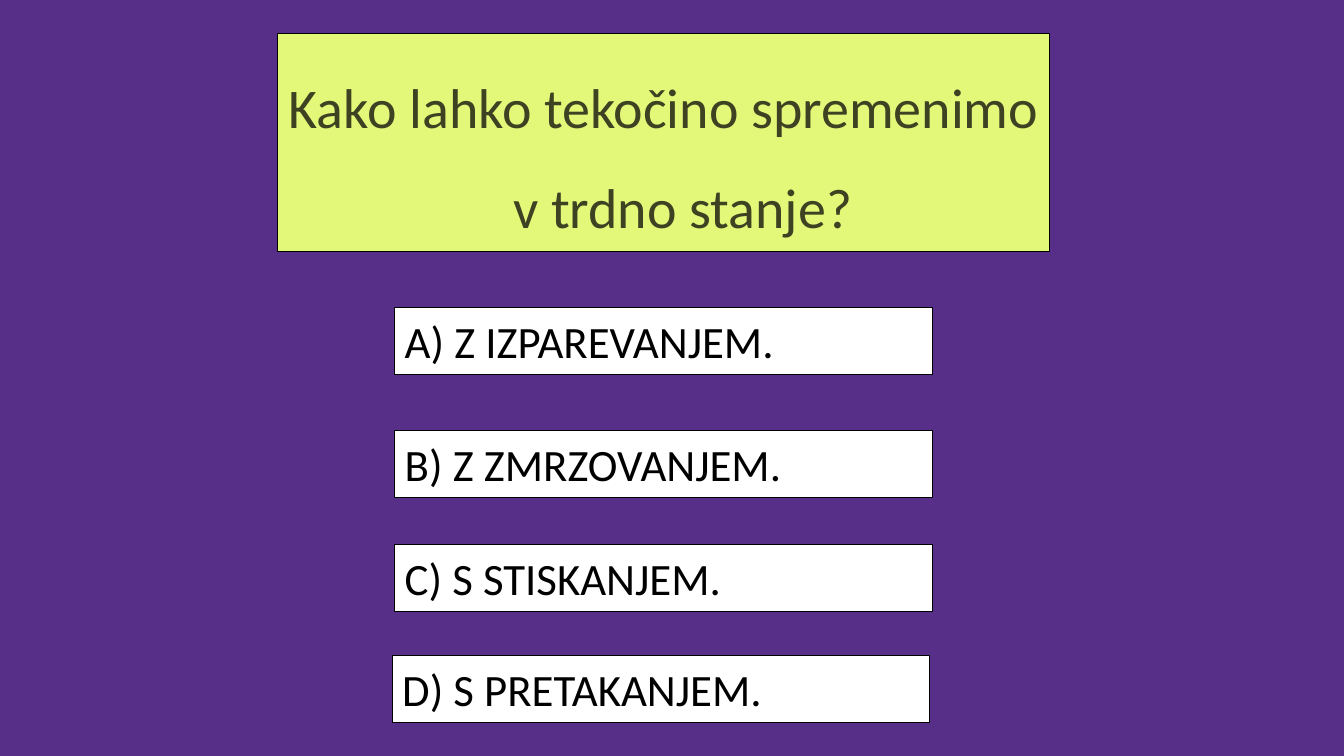
from pptx import Presentation
from pptx.dml.color import RGBColor
from pptx.enum.shapes import MSO_SHAPE
from pptx.enum.text import MSO_ANCHOR, PP_ALIGN
from pptx.util import Inches, Pt

COLORS = {
    "background": "572E88",
    "question": "E3F878",
    "question_text": "3E4223",
    "answer": "FFFFFF",
    "answer_text": "000000",
    "border": "000000",
}
COLUMNS, ROWS = 160, 90
ANSWERS = [
    ("A) Z IZPAREVANJEM.", 47, 36.6),
    ("B) Z ZMRZOVANJEM.", 47, 51.2),
    ("C) S STISKANJEM.", 47, 64.8),
    ("D) S PRETAKANJEM.", 46.7, 78),
]


def color(name):
    return RGBColor.from_string(COLORS[name])


def write(box, text, *, size, fill, font="Calibri", align=PP_ALIGN.LEFT,
          anchor=MSO_ANCHOR.MIDDLE, wrap=False, spacing=1.0, hanging=0):
    frame = box.text_frame
    frame.word_wrap = wrap
    frame.vertical_anchor = anchor
    para = frame.paragraphs[0]
    para.alignment = align
    para.line_spacing = spacing
    if hanging:
        properties = para._p.get_or_add_pPr()
        properties.set("marL", str(Inches(hanging)))
        properties.set("indent", str(-Inches(hanging)))
    span = para.add_run()
    span.text = text
    span.font.name = font
    span.font.size = Pt(size)
    span.font.color.rgb = color(fill)


class QuizPage:
    """Draws a quiz question and its answers on a grid over one slide."""

    def __init__(self, deck):
        self.page = deck.slides.add_slide(deck.slide_layouts[6])
        self.column = deck.slide_width / COLUMNS
        self.row = deck.slide_height / ROWS
        background = self.page.background.fill
        background.solid()
        background.fore_color.rgb = color("background")

    def panel(self, kind, left, top, width, height, fill):
        box = self.page.shapes.add_shape(
            kind, round(left * self.column), round(top * self.row),
            round(width * self.column), round(height * self.row))
        box.shadow.inherit = False
        box.fill.solid()
        box.fill.fore_color.rgb = color(fill)
        box.line.color.rgb = color("border")
        box.line.width = Pt(0.75)
        return box

    def question(self, text):
        box = self.panel(MSO_SHAPE.RECTANGLE, 33, 4, 92, 26, "question")
        write(box, text, size=40, fill="question_text", align=PP_ALIGN.CENTER,
              anchor=MSO_ANCHOR.TOP, wrap=True, spacing=1.5, hanging=0.38)

    def answer(self, text, left, top):
        box = self.panel(MSO_SHAPE.ACTION_BUTTON_CUSTOM, left, top, 64, 8, "answer")
        write(box, text, size=32, fill="answer_text")


def main():
    deck = Presentation()
    deck.slide_width = Inches(13.33)
    deck.slide_height = Inches(7.5)
    quiz = QuizPage(deck)
    quiz.question("Kako lahko tekočino spremenimo v trdno stanje?")
    for text, left, top in ANSWERS:
        quiz.answer(text, left, top)
    deck.save("out.pptx")


if __name__ == "__main__":
    main()
